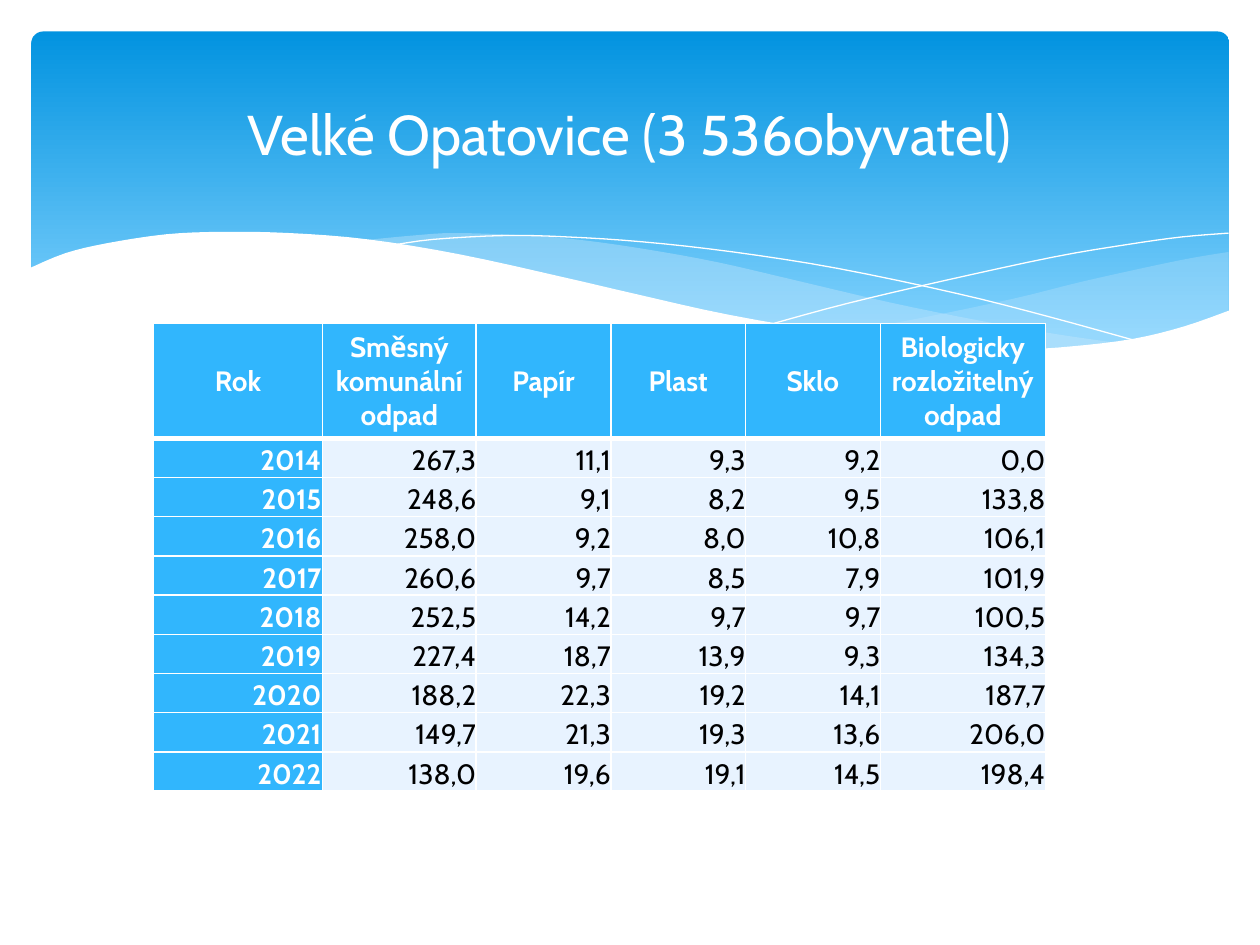
from dataclasses import dataclass

from lxml import etree
from pptx import Presentation
from pptx.dml.color import RGBColor
from pptx.enum.shapes import MSO_SHAPE
from pptx.enum.text import MSO_ANCHOR, PP_ALIGN
from pptx.oxml.ns import qn
from pptx.util import Pt

ROUND = MSO_SHAPE.ROUNDED_RECTANGLE
MIDDLE, BOTTOM = MSO_ANCHOR.MIDDLE, MSO_ANCHOR.BOTTOM
CENTER, RIGHT = PP_ALIGN.CENTER, PP_ALIGN.RIGHT


@dataclass(frozen=True)
class Theme:
    font: str = "Cabin"
    title: int = 32
    body: int = 16
    white: str = "FFFFFF"
    black: str = "000000"
    deep: str = "0293E0"
    sky: str = "83D3FE"
    mist: str = "C6E7FC"
    head: str = "31B6FD"
    pale: str = "E8F3FF"


THEME = Theme()

# Knots of the wave curves, in points
RIGHT_TOP = [(702, 144), (673, 149), (620, 160.6), (579.6, 170.6),
             (525, 182), (476, 190.8)]
RIGHT_LOW = [(476, 190.8), (507.6, 195), (545, 198.7), (578, 200),
             (615, 198.7), (646, 194.4), (673, 188.6), (702, 177.8)]
LEFT_TOP = [(643, 196.6), (602.6, 190.8), (558, 182.9), (508.3, 172.8),
            (452.9, 159.8), (409.7, 149.8), (370, 142.6), (334.8, 137.5),
            (302.4, 134.6), (260, 133.2), (236.2, 134.6), (206, 137.5)]
LEFT_LOW = [(206, 137.5), (246.2, 143.3), (290.9, 151.9), (323.3, 159.8),
            (381.6, 172.8), (432.7, 183.6), (478.8, 191.5), (519.8, 197.3),
            (556.6, 199.4), (589, 200.2), (617, 199.4), (643, 196.6)]
FALL = [(222.5, 140.4), (247.7, 136.8), (288.7, 134.6), (324, 135.4),
        (367.2, 138.2), (419, 144), (478.8, 153.4), (547.2, 167.8),
        (598.3, 180.7), (653, 195.8)]
RISE = [(441.4, 185), (483.8, 173.5), (538.6, 160.6), (601.9, 146.9),
        (644.4, 139.7), (675.4, 135.4), (702, 133.2)]
FRONT = [(703.4, 177.1), (676.8, 186.5), (647.3, 193.7), (612, 198),
         (582.5, 199.4), (535.7, 197.3), (481, 190.8), (416.9, 180),
         (362.2, 167.8), (321.8, 158.4), (262.8, 145.4), (210.2, 136.8),
         (165.6, 133.2), (127.4, 132.5), (95, 133.9), (61.2, 139),
         (37.4, 144.7), (16.6, 153.4)]
BASE = [(16.6, 236.9), (703.4, 236.9)]

# Table content
HEADS = ["Rok", "Směsný komunální odpad", "Papír", "Plast", "Sklo",
         "Biologicky rozložitelný odpad"]
DATA = [
    ["2014", "267,3", "11,1", "9,3", "9,2", "0,0"],
    ["2015", "248,6", "9,1", "8,2", "9,5", "133,8"],
    ["2016", "258,0", "9,2", "8,0", "10,8", "106,1"],
    ["2017", "260,6", "9,7", "8,5", "7,9", "101,9"],
    ["2018", "252,5", "14,2", "9,7", "9,7", "100,5"],
    ["2019", "227,4", "18,7", "13,9", "9,3", "134,3"],
    ["2020", "188,2", "22,3", "19,2", "14,1", "187,7"],
    ["2021", "149,7", "21,3", "19,3", "13,6", "206,0"],
    ["2022", "138,0", "19,6", "19,1", "14,5", "198,4"],
]
WIDTHS = [96.5, 87.8, 77, 77, 77, 94.3]
HEAD_H, ROW_H = 65.5, 22.4


def rgb(code):
    return RGBColor.from_string(code)


def write(frame, text, size=THEME.body, color=THEME.white, bold=False,
          align=CENTER):
    para = frame.paragraphs[0]
    para.alignment = align
    run = para.add_run()
    run.text = text
    font = run.font
    font.name, font.size, font.bold = THEME.font, Pt(size), bold
    font.color.rgb = rgb(color)


def smooth(knots, steps=4):
    """Return points on a Catmull-Rom curve through the knots."""
    ends = [knots[0], *knots, knots[-1]]
    out = [knots[0]]
    for a, b, c, d in zip(ends, ends[1:], ends[2:], ends[3:]):
        for step in range(1, steps + 1):
            t = step / steps
            out.append(tuple(
                (2 * q + (r - p) * t + (2 * p - 5 * q + 4 * r - s) * t ** 2
                 + (3 * q - p - 3 * r + s) * t ** 3) / 2
                for p, q, r, s in zip(a, b, c, d)))
    return out


def trace(slide, points, closed):
    spots = [(Pt(x), Pt(y)) for x, y in points]
    build = slide.shapes.build_freeform(*spots[0])
    build.add_line_segments(spots[1:], close=closed)
    shape = build.convert_to_shape()
    shape.shadow.inherit = False
    return shape


def wave(slide, points, color, alpha=100):
    shape = trace(slide, points, True)
    shape.fill.solid()
    shape.fill.fore_color.rgb = rgb(color)
    shape.line.fill.background()
    if alpha < 100:
        tint = shape.fill._xPr.find(".//" + qn("a:srgbClr"))
        etree.SubElement(tint, qn("a:alpha"), val=str(alpha * 1000))


def curve(slide, knots):
    shape = trace(slide, smooth(knots), False)
    shape.fill.background()
    shape.line.color.rgb = rgb(THEME.white)
    shape.line.width = Pt(0)


def banner(slide):
    shape = slide.shapes.add_shape(ROUND, Pt(18), Pt(18), Pt(684.5), Pt(194.5))
    shape.adjustments[0] = 0.034
    shape.shadow.inherit = False
    shape.line.fill.background()
    shape.fill.gradient()
    shape.fill.gradient_angle = 270
    stops = zip(shape.fill.gradient_stops, (0, 0.9), (THEME.deep, THEME.sky))
    for stop, place, color in stops:
        stop.position = place
        stop.color.rgb = rgb(color)


def title(slide, text):
    box = slide.shapes.add_textbox(Pt(36), Pt(26.6), Pt(648), Pt(98.6))
    box.text_frame.word_wrap = True
    box.text_frame.vertical_anchor = MIDDLE
    write(box.text_frame, text, size=THEME.title)


def edge(cell, **widths):
    """Draw white cell borders; the widths are keyed L, R, T and B."""
    props = cell._tc.get_or_add_tcPr()
    for side, width in widths.items():
        line = etree.SubElement(props, qn("a:ln" + side), w=str(Pt(width)))
        fill = etree.SubElement(line, qn("a:solidFill"))
        etree.SubElement(fill, qn("a:srgbClr"), val=THEME.white)


def grid(slide):
    rows = [HEADS, *DATA]
    high = HEAD_H + ROW_H * len(DATA)
    table = slide.shapes.add_table(len(rows), len(HEADS), Pt(87.8), Pt(185),
                                   Pt(sum(WIDTHS)), Pt(high)).table
    table.horz_banding = False
    for col, width in zip(table.columns, WIDTHS):
        col.width = Pt(width)
    for r, row in enumerate(rows):
        table.rows[r].height = Pt(ROW_H if r else HEAD_H)
        for c, text in enumerate(row):
            cell = table.cell(r, c)
            head = r == 0 or c == 0
            pad = Pt(0.7 if head else 0)
            cell.margin_left = cell.margin_right = cell.margin_top = pad
            cell.margin_bottom = 0
            cell.vertical_anchor = BOTTOM if r else MIDDLE
            edge(cell, L=1, R=1, T=3 if r == 1 else 1, B=1 if r else 3)
            cell.fill.solid()
            cell.fill.fore_color.rgb = rgb(THEME.head if head else THEME.pale)
            write(cell.text_frame, text, bold=head,
                  color=THEME.white if head else THEME.black,
                  align=RIGHT if r else CENTER)


def main():
    deck = Presentation()
    deck.slide_width, deck.slide_height = Pt(720), Pt(540)
    slide = deck.slides.add_slide(deck.slide_layouts[6])
    # Banner with waves
    banner(slide)
    wave(slide, smooth(RIGHT_TOP) + smooth(RIGHT_LOW), THEME.mist, 29)
    wave(slide, smooth(LEFT_TOP) + smooth(LEFT_LOW), THEME.mist, 40)
    curve(slide, FALL)
    curve(slide, RISE)
    wave(slide, smooth(FRONT) + BASE, THEME.white)
    # Title and table
    title(slide, "Velké Opatovice (3 536obyvatel)")
    grid(slide)
    deck.save("out.pptx")


if __name__ == "__main__":
    main()
